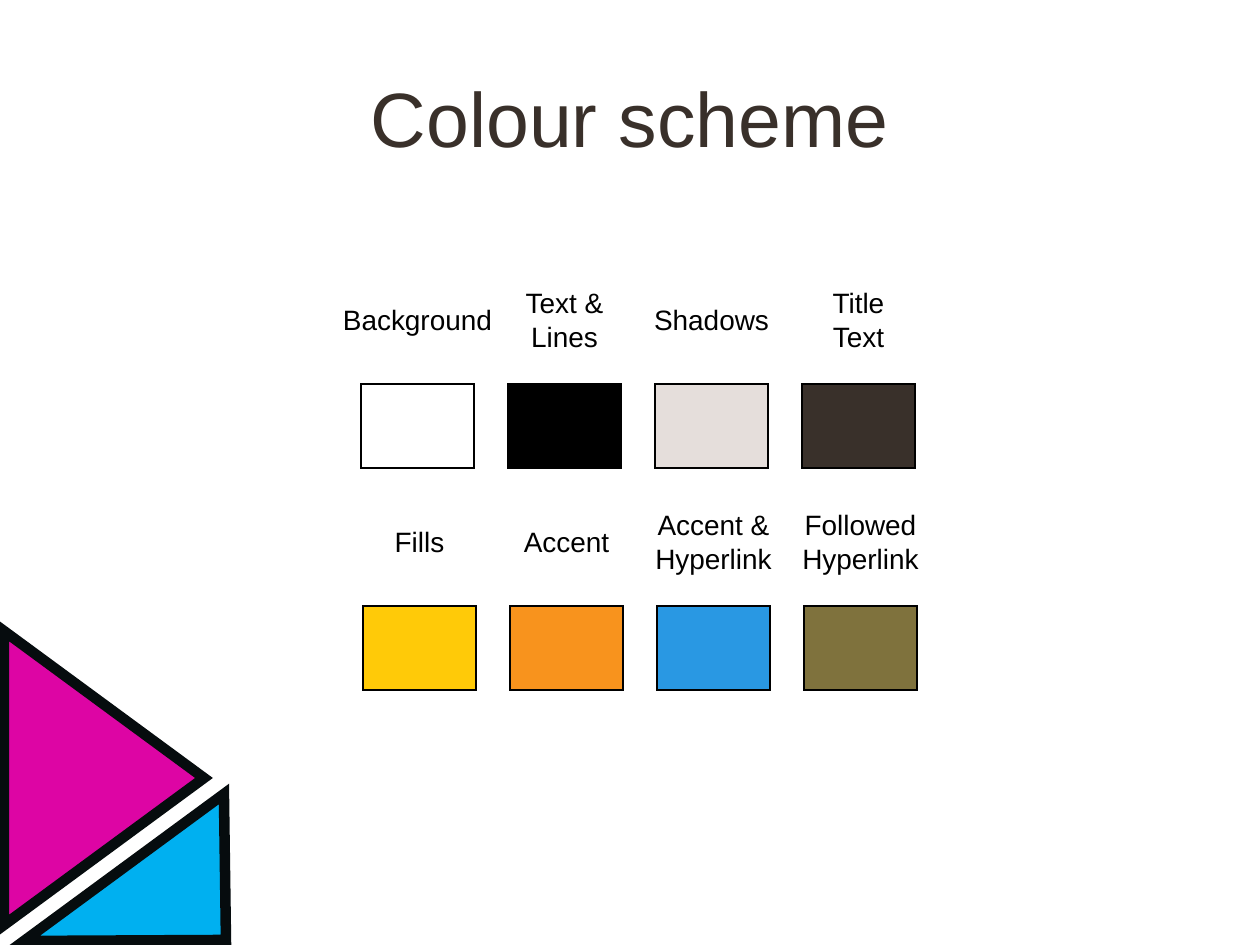
from dataclasses import dataclass

from lxml.etree import SubElement
from pptx import Presentation
from pptx.dml.color import RGBColor
from pptx.enum.shapes import MSO_SHAPE
from pptx.enum.text import MSO_ANCHOR, MSO_AUTO_SIZE, PP_ALIGN
from pptx.oxml.ns import qn
from pptx.util import Inches, Pt

PX = Inches(1) / 126


@dataclass(frozen=True)
class Theme:
    font: str = "Arial"
    title_size: int = 44
    label_size: int = 16
    background: str = "FFFFFF"
    text: str = "000000"
    shadow: str = "E5DEDB"
    title: str = "39302A"
    fill: str = "FFCA08"
    accent: str = "F8931D"
    link: str = "2998E3"
    followed_link: str = "7F723D"
    outline: str = "060C0E"
    magenta: str = "DD05A4"
    cyan: str = "00B0F0"


def emu(*lengths):
    return [round(length * PX) for length in lengths]


class SlideBuilder:
    def __init__(self, slide, theme):
        self.slide = slide
        self.theme = theme
        slide.background.fill.solid()
        slide.background.fill.fore_color.rgb = RGBColor.from_string(theme.background)

    def paint(self, shape, fill, line, line_width):
        shape.shadow.inherit = False
        shape.fill.solid()
        shape.fill.fore_color.rgb = RGBColor.from_string(fill)
        shape.line.color.rgb = RGBColor.from_string(line)
        shape.line.width = Pt(line_width)
        SubElement(shape.line._ln, qn("a:miter"), lim="800000")

    def swatch(self, left, top, width, height, color):
        shape = self.slide.shapes.add_shape(
            MSO_SHAPE.RECTANGLE, *emu(left, top, width, height))
        self.paint(shape, color, self.theme.text, 0.75)

    def right_pointing_triangle(self, left, top, width, height, color):
        """Place an upright triangle turned about its centre; the box is the unturned one."""
        shape = self.slide.shapes.add_shape(
            MSO_SHAPE.ISOSCELES_TRIANGLE, *emu(left, top, width, height))
        shape.rotation = 90
        self.paint(shape, color, self.theme.outline, 6)

    def polygon(self, points, color):
        builder = self.slide.shapes.build_freeform(*points[0], scale=PX)
        builder.add_line_segments(points[1:], close=True)
        self.paint(builder.convert_to_shape(), color, self.theme.outline, 6)

    def text(self, left, top, width, height, text, size, color, wrap):
        frame = self.slide.shapes.add_textbox(*emu(left, top, width, height)).text_frame
        frame.word_wrap = wrap
        frame.auto_size = MSO_AUTO_SIZE.NONE if wrap else MSO_AUTO_SIZE.SHAPE_TO_FIT_TEXT
        frame.vertical_anchor = MSO_ANCHOR.MIDDLE if wrap else MSO_ANCHOR.TOP
        frame.text = text
        for paragraph in frame.paragraphs:
            paragraph.alignment = PP_ALIGN.CENTER
            paragraph.font.name = self.theme.font
            paragraph.font.size = Pt(size)
            paragraph.font.color.rgb = RGBColor.from_string(color)

    def title(self, text):
        self.text(63, 38, 1134, 158, text, self.theme.title_size, self.theme.title, True)

    def label(self, center_x, center_y, width, text):
        height = 81 if "\n" in text or "\v" in text else 47
        self.text(center_x - width / 2, center_y - height / 2, width, height,
                  text, self.theme.label_size, self.theme.text, False)


def main():
    presentation = Presentation()
    presentation.slide_width, presentation.slide_height = Inches(10), Inches(7.5)
    theme = Theme()
    builder = SlideBuilder(
        presentation.slides.add_slide(presentation.slide_layouts[6]), theme)

    builder.polygon([(226, 940), (24, 941), (224, 794)], theme.cyan)
    builder.right_pointing_triangle(-43, 678, 294, 200, theme.magenta)
    builder.title("Colour scheme")

    swatch_width, swatch_height, swatch_gap, label_rise = 113, 84, 34, 64
    row_starts = [(361, 384), (363, 606)]
    rows = [
        [("Background", 176, theme.background),
         ("Text &\nLines", 108, theme.text),
         ("Shadows", 144, theme.shadow),
         ("Title\vText", 84, theme.title)],
        [("Fills", 80, theme.fill),
         ("Accent", 116, theme.accent),
         ("Accent &\nHyperlink", 148, theme.link),
         ("Followed\nHyperlink", 148, theme.followed_link)],
    ]
    for (row_left, top), entries in zip(row_starts, rows):
        for column, (name, label_width, color) in enumerate(entries):
            left = row_left + column * (swatch_width + swatch_gap)
            builder.swatch(left, top, swatch_width, swatch_height, color)
            builder.label(left + swatch_width / 2, top - label_rise, label_width, name)

    presentation.save("out.pptx")


if __name__ == "__main__":
    main()
